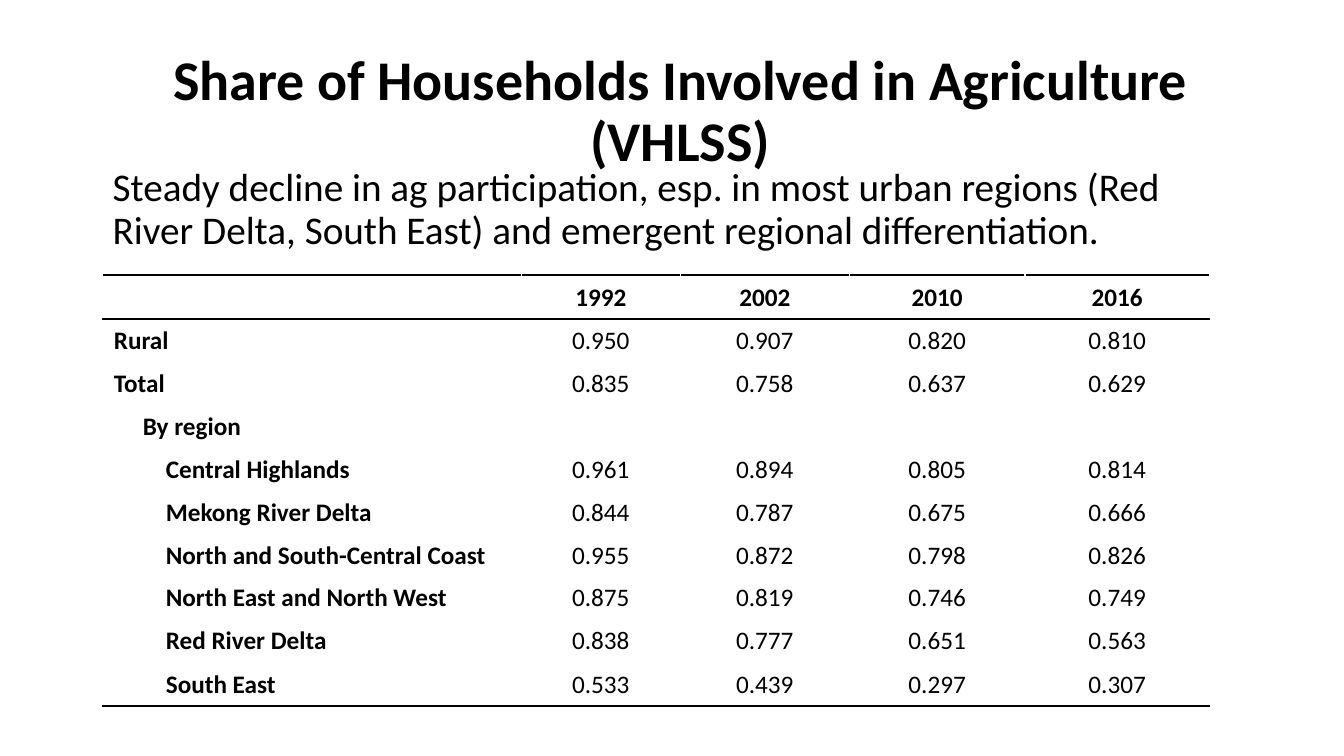
from lxml.etree import SubElement
from pptx import Presentation
from pptx.dml.color import RGBColor
from pptx.enum.text import MSO_ANCHOR as Anchor, PP_ALIGN as Align
from pptx.oxml import parse_xml
from pptx.oxml.ns import qn
from pptx.util import Cm, Pt

BLACK = RGBColor(0x00, 0x00, 0x00)
WHITE = RGBColor(0xFF, 0xFF, 0xFF)
DRAWING_NS = "http://schemas.openxmlformats.org/drawingml/2006/main"

YEARS = ["1992", "2002", "2010", "2016"]
# Label, indent level, shares by year
SHARES = [
    ("Rural", 0, ["0.950", "0.907", "0.820", "0.810"]),
    ("Total", 0, ["0.835", "0.758", "0.637", "0.629"]),
    ("By region", 1, [""] * 4),
    ("Central Highlands", 2, ["0.961", "0.894", "0.805", "0.814"]),
    ("Mekong River Delta", 2, ["0.844", "0.787", "0.675", "0.666"]),
    ("North and South-Central Coast", 2, ["0.955", "0.872", "0.798", "0.826"]),
    ("North East and North West", 2, ["0.875", "0.819", "0.746", "0.749"]),
    ("Red River Delta", 2, ["0.838", "0.777", "0.651", "0.563"]),
    ("South East", 2, ["0.533", "0.439", "0.297", "0.307"]),
]
LABEL_INDENTS = [Cm(0.28), Cm(1.01), Cm(1.59)]
COLUMN_WIDTHS = [Cm(10.55), Cm(4), Cm(4.27), Cm(4.42), Cm(4.65)]


def write_text(frame, text, size, bold=False, align=Align.LEFT, spacing=None, before=0):
    para = frame.paragraphs[0]
    para.alignment = align
    para.line_spacing = spacing
    para.space_before = Pt(before)
    para.font.size = Pt(size)
    if text:
        span = para.add_run()
        span.text = text
        span.font.name = "Calibri"
        span.font.size = Pt(size)
        span.font.bold = bold
        span.font.color.rgb = BLACK


def set_borders(cell, top, bottom):
    """Draw 1 pt borders; the left and right sides are white."""
    properties = cell._tc.get_or_add_tcPr()
    sides = [("lnL", WHITE), ("lnR", WHITE), ("lnT", top), ("lnB", bottom)]
    for position, (side, color) in enumerate(sides):
        line = parse_xml(f'<a:{side} xmlns:a="{DRAWING_NS}" w="{Pt(1)}"/>')
        fill = SubElement(line, qn("a:solidFill"))
        SubElement(fill, qn("a:srgbClr"), val=str(color))
        properties.insert(position, line)


deck = Presentation()
deck.slide_width = Cm(33.87)
deck.slide_height = Cm(19.05)
page = deck.slides.add_slide(deck.slide_layouts[6])

title_box = page.shapes.add_textbox(Cm(2.33), Cm(1.01), Cm(29.63), Cm(3.68))
title_box.text_frame.word_wrap = True
title_box.text_frame.vertical_anchor = Anchor.MIDDLE
write_text(title_box.text_frame, "Share of Households Involved in Agriculture (VHLSS)",
           40, bold=True, align=Align.CENTER, spacing=0.9)

rows = [("", 0, YEARS)] + SHARES
last_row = len(rows) - 1
table = page.shapes.add_table(len(rows), len(COLUMN_WIDTHS), Cm(2.59), Cm(6.93),
                              sum(COLUMN_WIDTHS), Cm(10.82)).table
table.first_row = False
table.horz_banding = False
for column, width in zip(table.columns, COLUMN_WIDTHS):
    column.width = width

for row_index, (label, level, values) in enumerate(rows):
    is_header = row_index == 0
    table.rows[row_index].height = Cm(1.11) if row_index in (0, last_row) else Cm(1.08)
    for column_index, text in enumerate([label] + values):
        is_label = column_index == 0
        cell = table.cell(row_index, column_index)
        cell.fill.background()
        cell.vertical_anchor = Anchor.MIDDLE
        cell.margin_left = LABEL_INDENTS[level] if is_label else Cm(0.03)
        cell.margin_right = cell.margin_top = Cm(0.03)
        cell.margin_bottom = 0
        write_text(cell.text_frame, text, 18, bold=is_header or is_label,
                   align=Align.LEFT if is_label else Align.CENTER)
        set_borders(cell, top=BLACK if row_index <= 1 else WHITE,
                    bottom=BLACK if row_index in (0, last_row) else WHITE)

summary_box = page.shapes.add_textbox(Cm(2.59), Cm(4.11), Cm(28.04), Cm(15.88))
summary_box.text_frame.word_wrap = True
write_text(summary_box.text_frame,
           "Steady decline in ag participation, esp. in most urban regions "
           "(Red River Delta, South East) and emergent regional differentiation.",
           28, spacing=0.9, before=10)

deck.save("out.pptx")
